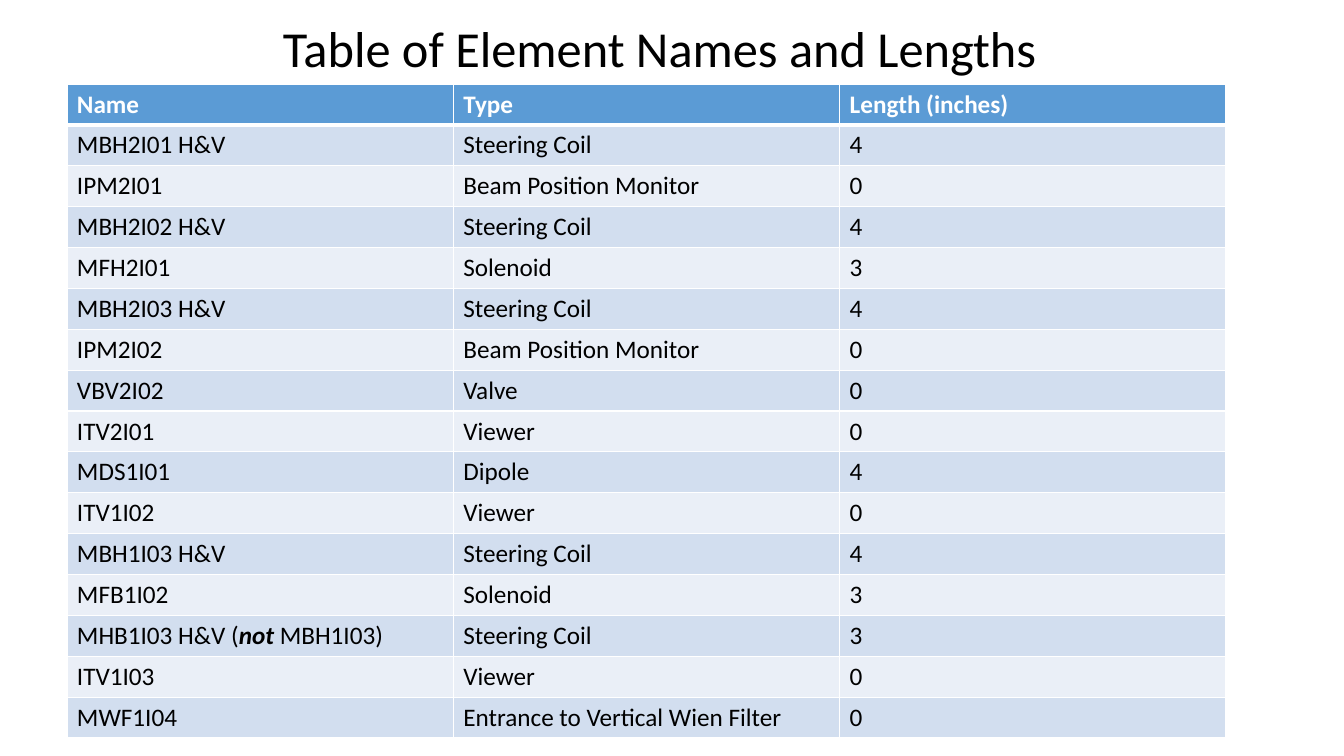
from dataclasses import dataclass

from lxml.etree import SubElement
from pptx import Presentation
from pptx.dml.color import RGBColor as RGB
from pptx.enum.text import MSO_ANCHOR as Anchor, PP_ALIGN as Align
from pptx.oxml.ns import qn
from pptx.util import Pt


@dataclass(frozen=True)
class Theme:
    """Colours, font and sizes of the slide."""
    font: str = "Calibri"
    head: str = "5B9BD5"
    bands: tuple = ("EAEFF7", "D2DEEF")
    light: str = "FFFFFF"
    dark: str = "000000"
    title: int = 36
    body: int = 18
    rule: int = 1
    thick: int = 3


THEME = Theme()

ROWS = [
    ("Name", "Type", "Length (inches)"),
    ("MBH2I01 H&V", "Steering Coil", "4"),
    ("IPM2I01", "Beam Position Monitor", "0"),
    ("MBH2I02 H&V", "Steering Coil", "4"),
    ("MFH2I01", "Solenoid", "3"),
    ("MBH2I03 H&V", "Steering Coil", "4"),
    ("IPM2I02", "Beam Position Monitor", "0"),
    ("VBV2I02", "Valve", "0"),
    ("ITV2I01", "Viewer", "0"),
    ("MDS1I01", "Dipole", "4"),
    ("ITV1I02", "Viewer", "0"),
    ("MBH1I03 H&V", "Steering Coil", "4"),
    ("MFB1I02", "Solenoid", "3"),
    ("MHB1I03 H&V (*not* MBH1I03)", "Steering Coil", "3"),
    ("ITV1I03", "Viewer", "0"),
    ("MWF1I04", "Entrance to Vertical Wien Filter", "0"),
]


def write(frame, text, size=THEME.body, color=THEME.dark, bold=False,
          align=Align.LEFT, spacing=1.0):
    """Fill a text frame; parts between asterisks are bold italic."""
    line = frame.paragraphs[0]
    line.alignment = align
    line.line_spacing = spacing
    for i, part in enumerate(text.split("*")):
        run = line.add_run()
        run.text = part
        font = run.font
        strong = i % 2 == 1
        font.name, font.size = THEME.font, Pt(size)
        font.bold, font.italic = bold or strong, strong
        font.color.rgb = RGB.from_string(color)


def edge(cell, side, width):
    """Draw one light border of a cell."""
    line = SubElement(cell._tc.get_or_add_tcPr(), qn("a:ln" + side),
                      w=str(Pt(width)))
    fill = SubElement(line, qn("a:solidFill"))
    SubElement(fill, qn("a:srgbClr"), val=THEME.light)


def add_title(slide, box, text):
    """Place the centred title in its box."""
    title = slide.shapes.title
    title.left, title.top, title.width, title.height = map(Pt, box)
    title.text_frame.vertical_anchor = Anchor.MIDDLE
    write(title.text_frame, text, size=THEME.title, align=Align.CENTER,
          spacing=0.9)


def add_grid(slide, box, rows):
    """Place a banded table with a header row in its box."""
    left, top, width, height = box
    count = len(rows[0])
    table = slide.shapes.add_table(len(rows), count, *map(Pt, box)).table
    for col in table.columns:
        col.width = Pt(width / count)
    for r, row in enumerate(rows):
        table.rows[r].height = Pt(height / len(rows))
        head = r == 0
        for c, text in enumerate(row):
            cell = table.cell(r, c)
            for side in "LRTB":
                thick = (r, side) in ((0, "B"), (1, "T"))
                edge(cell, side, THEME.thick if thick else THEME.rule)
            cell.fill.solid()
            shade = THEME.head if head else THEME.bands[r % 2]
            cell.fill.fore_color.rgb = RGB.from_string(shade)
            write(cell.text_frame, text, bold=head,
                  color=THEME.light if head else THEME.dark)


def main():
    """Build and save the slide."""
    deck = Presentation()
    deck.slide_width, deck.slide_height = Pt(960), Pt(540)
    slide = deck.slides.add_slide(deck.slide_layouts[5])
    add_title(slide, (67, 0, 808.5, 72.5), "Table of Element Names and Lengths")
    add_grid(slide, (47.8, 60, 828, 467.2), ROWS)
    deck.save("out.pptx")


if __name__ == "__main__":
    main()
